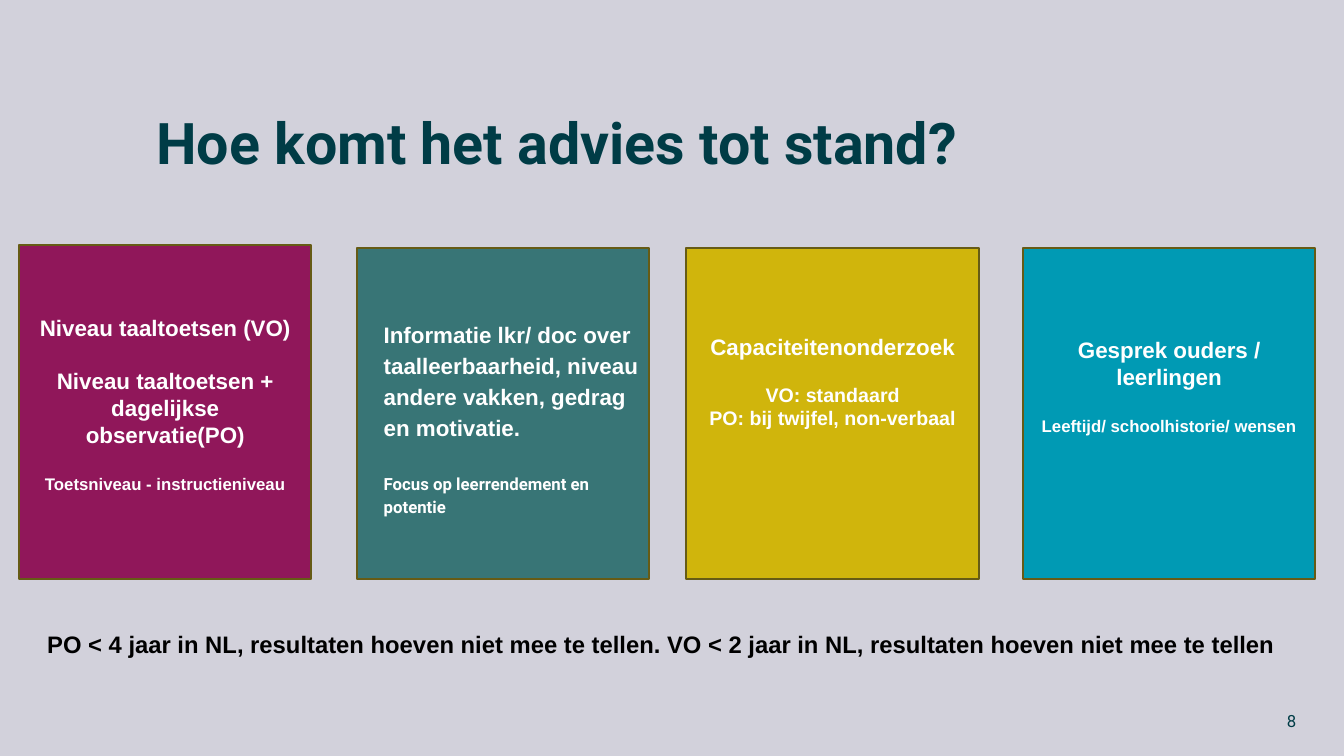
"""Build the slide on how the school advice comes about."""
from dataclasses import dataclass

from pptx import Presentation
from pptx import util as u
from pptx.dml.color import RGBColor
from pptx.enum import shapes, text

COLOURS = {
    "background": "D2D1DB", "petrol": "003C46", "border": "665B15",
    "purple": "90175A", "green": "387576", "mustard": "D0B50C",
    "cyan": "009AB4", "white": "FFFFFF", "black": "000000",
}
CARD_WIDTH = 7.37
CARD_BOTTOM = 14.6
CARD_INSET = 0.25


@dataclass(frozen=True)
class Line:
    """A paragraph with its type size, font and gap above."""
    words: str
    size: float = 16
    gap: float = 0
    font: str = "Arial"
    bold: bool = True


@dataclass(frozen=True)
class Card:
    """A coloured card; lengths are in centimetres."""
    left: float
    top: float
    fill: str
    text_top: float
    lines: tuple[Line, ...]
    indent: float = 0
    align: text.PP_ALIGN = text.PP_ALIGN.CENTER
    spacing: float = 1.0


CARDS = (
    Card(0.48, 6.17, "purple", 1.75, (
        Line("Niveau taaltoetsen (VO)"),
        Line("Niveau taaltoetsen + dagelijkse observatie(PO)", gap=18.4),
        Line("Toetsniveau - instructieniveau", 12, 18.4))),
    Card(8.99, 6.25, "green", 1.74, (
        Line("Informatie lkr/ doc over taalleerbaarheid, niveau andere vakken, "
             "gedrag en motivatie."),
        Line("Focus op leerrendement en potentie", 12, 21.2, "Roboto")),
         0.43, text.PP_ALIGN.LEFT, 1.15),
    Card(17.3, 6.25, "mustard", 2.15, (
        Line("Capaciteitenonderzoek"),
        Line("VO: standaard", 14, 16.1),
        Line("PO: bij twijfel, non-verbaal", 14))),
    Card(25.78, 6.25, "cyan", 2.23, (
        Line("Gesprek ouders / leerlingen"),
        Line("Leeftijd/ schoolhistorie/ wensen", 12, 18.4))),
)


def colour(name: str) -> RGBColor:
    """Return a named colour."""
    return RGBColor.from_string(COLOURS[name])


def apply(target, **values) -> None:
    """Set each given attribute on the target."""
    for name, value in values.items():
        setattr(target, name, value)


def write(shape, lines: tuple[Line, ...], ink: str, align=text.PP_ALIGN.LEFT,
          anchor=text.MSO_ANCHOR.TOP, spacing: float = 1.0) -> None:
    """Fill a shape with formatted paragraphs."""
    frame = shape.text_frame
    apply(frame, word_wrap=True, auto_size=text.MSO_AUTO_SIZE.NONE,
          vertical_anchor=anchor)
    for index, line in enumerate(lines):
        paragraph = frame.add_paragraph() if index else frame.paragraphs[0]
        apply(paragraph, text=line.words, alignment=align,
              line_spacing=spacing, space_before=u.Pt(line.gap))
        apply(paragraph.font, size=u.Pt(line.size), name=line.font,
              bold=line.bold)
        paragraph.font.color.rgb = colour(ink)


def place(shape, left: float, top: float, width: float, height: float) -> None:
    """Position a shape in centimetres."""
    apply(shape, left=u.Cm(left), top=u.Cm(top),
          width=u.Cm(width), height=u.Cm(height))


def add_card(slide, card: Card) -> None:
    """Draw one coloured card with its text."""
    shape = slide.shapes.add_shape(
        shapes.MSO_SHAPE.RECTANGLE, u.Cm(card.left), u.Cm(card.top),
        u.Cm(CARD_WIDTH), u.Cm(CARD_BOTTOM - card.top))
    shape.shadow.inherit = False
    shape.fill.solid()
    shape.fill.fore_color.rgb = colour(card.fill)
    shape.line.color.rgb = colour("border")
    shape.line.width = u.Pt(1.5)
    apply(shape.text_frame, margin_top=u.Cm(card.text_top),
          margin_left=u.Cm(CARD_INSET + card.indent),
          margin_right=u.Cm(CARD_INSET))
    write(shape, card.lines, "white", card.align, spacing=card.spacing)


def add_text(slide, box: tuple[float, float, float, float], line: Line,
             ink: str, **layout) -> None:
    """Add a one-line text box."""
    shape = slide.shapes.add_textbox(*(u.Cm(length) for length in box))
    write(shape, (line,), ink, **layout)


def main() -> None:
    """Compose and save the slide."""
    presentation = Presentation()
    apply(presentation, slide_width=u.Cm(33.87), slide_height=u.Cm(19.05))
    slide = presentation.slides.add_slide(presentation.slide_layouts[5])
    slide.background.fill.solid()
    slide.background.fill.fore_color.rgb = colour("background")

    title = slide.shapes.title
    place(title, 3.68, 2.57, 22.43, 3)
    write(title, (Line("Hoe komt het advies tot stand?", 41, font="Roboto"),),
          "petrol")
    for card in CARDS:
        add_card(slide, card)
    add_text(slide, (0.94, 15.75, 32.92, 0.99), Line(
        "PO < 4 jaar in NL, resultaten hoeven niet mee te tellen. "
        "VO < 2 jaar in NL, resultaten hoeven niet mee te tellen", 17), "black")
    add_text(slide, (25.3, 17.65, 7.62, 1.02),
             Line("8", 12, font="Roboto", bold=False), "petrol",
             align=text.PP_ALIGN.RIGHT, anchor=text.MSO_ANCHOR.MIDDLE)
    presentation.save("out.pptx")


if __name__ == "__main__":
    main()
